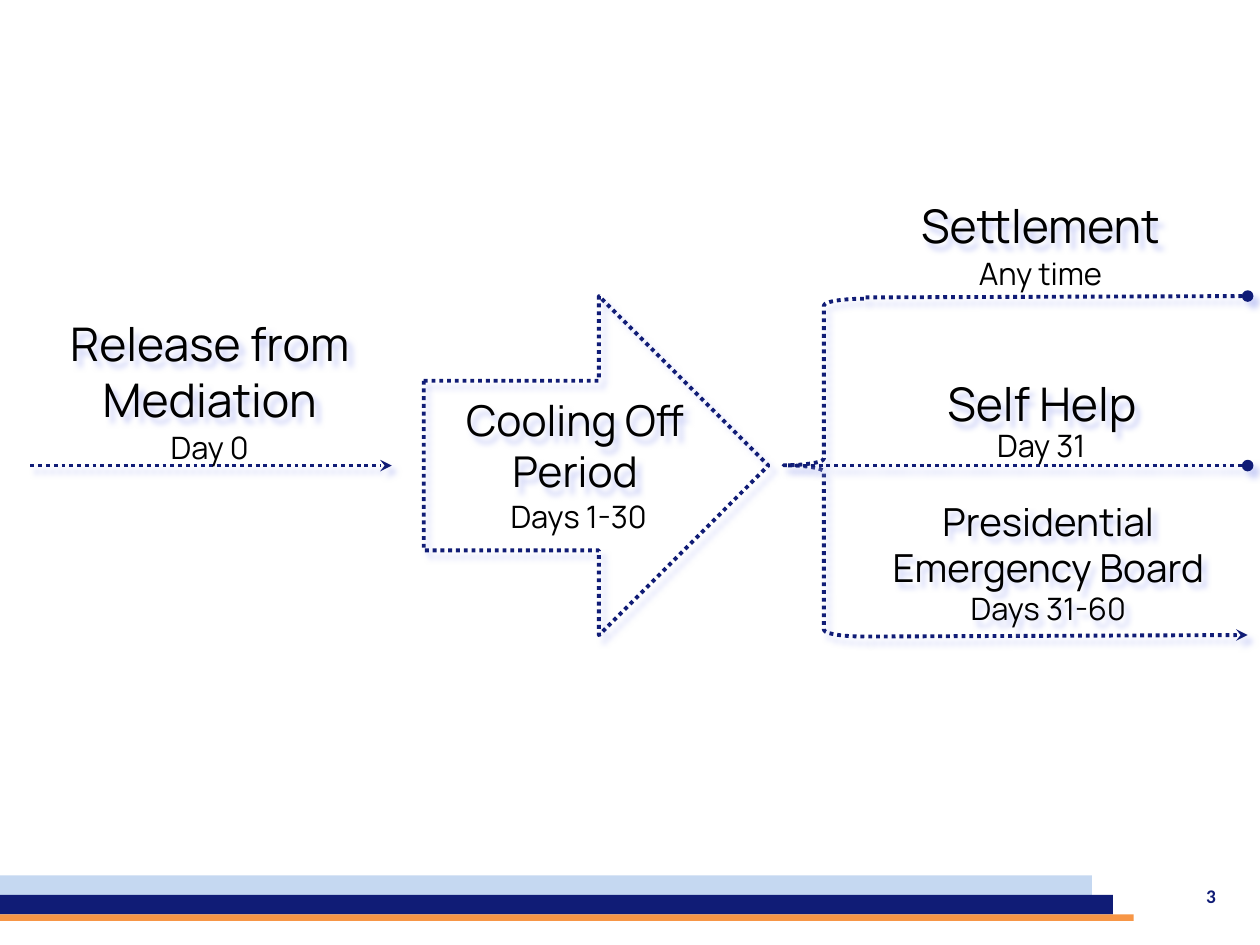
from lxml import etree
from pptx import Presentation
from pptx.dml.color import RGBColor
from pptx.enum.dml import MSO_LINE
from pptx.enum.shapes import MSO_CONNECTOR, MSO_SHAPE
from pptx.enum.text import MSO_ANCHOR, PP_ALIGN
from pptx.oxml.ns import qn
from pptx.util import Pt

RECTANGLE = MSO_SHAPE.RECTANGLE
RIGHT_ARROW = MSO_SHAPE.RIGHT_ARROW
LEFT_BRACE = MSO_SHAPE.LEFT_BRACE
STRAIGHT = MSO_CONNECTOR.STRAIGHT
DOTTED = MSO_LINE.ROUND_DOT
CENTER, RIGHT = PP_ALIGN.CENTER, PP_ALIGN.RIGHT
TOP, MIDDLE = MSO_ANCHOR.TOP, MSO_ANCHOR.MIDDLE

COLORS = {
    "navy": "101C76",
    "light_blue": "C5D8F1",
    "orange": "F79646",
    "shadow": "CCD1F8",
    "text": "000000",
}
BLANK_LAYOUT = 6
LINE_END = 646.6
MIDDLE_Y = 241.2


def color(name):
    return RGBColor.from_string(COLORS[name])


def add_shadow(shape):
    """Give the shape a soft lavender shadow to the lower right."""
    properties = shape._element.spPr
    for old_effects in properties.findall(qn("a:effectLst")):
        properties.remove(old_effects)
    effects = etree.SubElement(properties, qn("a:effectLst"))
    shadow = etree.SubElement(effects, qn("a:outerShdw"), blurRad=str(Pt(3)),
                              dist=str(Pt(4)), dir=str(50 * 60000),
                              algn="tl", rotWithShape="0")
    etree.SubElement(shadow, qn("a:srgbClr"), val=COLORS["shadow"])


def format_dotted(line):
    line.color.rgb = color("navy")
    line.width = Pt(2)
    line.dash_style = DOTTED


def add_bar(slide, top, width, height, fill):
    bar = slide.shapes.add_shape(RECTANGLE, 0, Pt(top), Pt(width), Pt(height))
    bar.shadow.inherit = False
    bar.fill.solid()
    bar.fill.fore_color.rgb = color(fill)
    bar.line.fill.background()


def add_timeline(slide, start, end, head):
    connector = slide.shapes.add_connector(
        STRAIGHT, *(Pt(value) for value in start + end))
    format_dotted(connector.line)
    etree.SubElement(connector.line._get_or_add_ln(), qn("a:tailEnd"), type=head)
    add_shadow(connector)


def add_outline(slide, kind, left, top, width, height, adjustments=()):
    shape = slide.shapes.add_shape(kind, Pt(left), Pt(top), Pt(width), Pt(height))
    for index, value in enumerate(adjustments):
        shape.adjustments[index] = value
    shape.fill.background()
    format_dotted(shape.line)
    add_shadow(shape)


def add_text(slide, box, paragraphs, spacing=1, wrap=True, shadow=False,
             align=CENTER, anchor=TOP, font="Manrope", font_color="text",
             bold=False):
    text_box = slide.shapes.add_textbox(*(Pt(value) for value in box))
    frame = text_box.text_frame
    frame.word_wrap = wrap
    frame.vertical_anchor = anchor
    for index, (text, size) in enumerate(paragraphs):
        paragraph = frame.paragraphs[0] if index == 0 else frame.add_paragraph()
        paragraph.text = text
        paragraph.alignment = align
        paragraph.line_spacing = spacing
        paragraph.font.name = font
        paragraph.font.size = Pt(size)
        paragraph.font.bold = bold
        paragraph.font.color.rgb = color(font_color)
    if shadow:
        add_shadow(text_box)


def add_heading(slide, box, paragraphs, **options):
    add_text(slide, box, paragraphs, shadow=True, **options)


def add_day(slide, box, text, **options):
    add_text(slide, box, [(text, 16)], **options)


def main():
    presentation = Presentation()
    presentation.slide_width, presentation.slide_height = Pt(653), Pt(489.6)
    slide = presentation.slides.add_slide(presentation.slide_layouts[BLANK_LAYOUT])

    # Footer bars, each a step wider than the one above, and slide number
    bars = [("light_blue", 10.1), ("navy", 10.1), ("orange", 3.4)]
    for index, (fill, height) in enumerate(bars):
        add_bar(slide, 453.6 + 10.1 * index, 565.9 + 10.8 * index, height, fill)
    add_text(slide, (484.6, 451.4, 152.6, 25.9), [("3", 10)], align=RIGHT,
             anchor=MIDDLE, font="Calibri", font_color="navy", bold=True)

    # Release from mediation
    add_timeline(slide, (15.8, MIDDLE_Y), (203, MIDDLE_Y), "stealth")
    add_heading(slide, (0, 159.8, 217.4, 65.5), [("Release from Mediation", 24)])
    add_day(slide, (0, 208.8, 217.4, 33.1), "Day 0", spacing=1.5)

    # Cooling off period
    add_outline(slide, RIGHT_ARROW, 219.6, 153.4, 178.6, 175.7)
    add_heading(slide, (221, 200.9, 154.1, 60.5),
                [("Cooling Off", 22), ("Period", 22)])
    add_day(slide, (255.6, 244.8, 88.6, 33.1), "Days 1-30", spacing=1.5, wrap=False)

    # Brace that branches into the three outcomes
    add_outline(slide, LEFT_BRACE, 406.1, 154.8, 41.8, 175, (0.083, 0.493))

    # Settlement
    add_timeline(slide, (448.6, 154.1), (LINE_END, 153.4), "oval")
    add_heading(slide, (468.7, 98.6, 141.1, 36), [("Settlement", 24)], wrap=False)
    add_day(slide, (498.2, 128.2, 82.1, 26.6), "Any time", wrap=False)

    # Self help
    add_timeline(slide, (408.2, MIDDLE_Y), (LINE_END, MIDDLE_Y), "oval")
    add_heading(slide, (480.2, 176.4, 119.5, 46.1), [("Self Help", 24)],
                spacing=1.5, wrap=False)
    add_day(slide, (507.6, 208.1, 64.1, 33.1), "Day 31", spacing=1.5, wrap=False)

    # Presidential emergency board
    add_timeline(slide, (450, 329.8), (LINE_END, 329), "stealth")
    add_heading(slide, (434.2, 254.2, 218.2, 74.9),
                [("Presidential Emergency Board", 20), ("Days 31-60", 16)])

    presentation.save("out.pptx")


if __name__ == "__main__":
    main()
